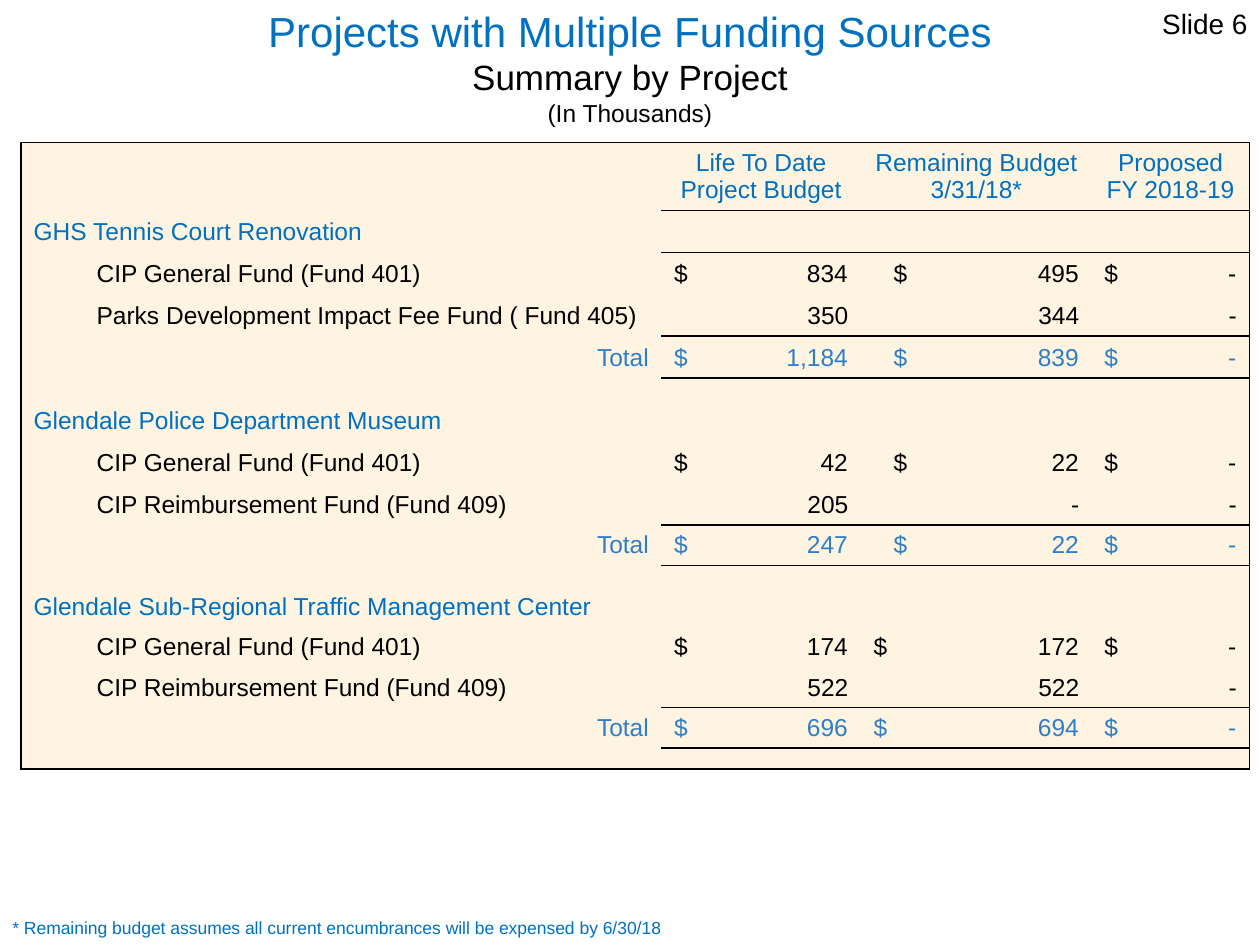
"""Builds the slide that sums up projects with multiple funding sources."""
from lxml.etree import SubElement
from pptx import Presentation
from pptx.dml.color import RGBColor as Rgb
from pptx.enum.text import MSO_ANCHOR as Anchor, MSO_AUTO_SIZE as AutoSize, PP_ALIGN as Align
from pptx.oxml.ns import qn
from pptx.util import Pt

THEME = {
    "font": "Arial", "blue": "0070C0", "total": "2F7FC7", "black": "000000", "cream": "FFF3E1",
    "title": 24, "subtitle": 20, "page": 16, "body": 14, "note": 10, "blank": 4,
}
NO_STYLE = "{2D5ABB26-0587-4C30-8999-92F81FD0307C}"
INSET = 7.2
WIDTHS = [366, 114, 132, 90]
HEADINGS = ["", "Life To Date Project Budget", "Remaining Budget 3/31/18*", "Proposed FY 2018-19"]
GENERAL = "CIP General Fund (Fund 401)"
REIMBURSEMENT = "CIP Reimbursement Fund (Fund 409)"
PROJECTS = [
    ("GHS Tennis Court Renovation", 24, 24, 11.5, [
        (GENERAL, "834", "495", "-"),
        ("Parks Development Impact Fee Fund ( Fund 405)", "350", "344", "-"),
        ("Total", "1,184", "839", "-")]),
    ("Glendale Police Department Museum", 24, 23.1, 11.5, [
        (GENERAL, "42", "22", "-"),
        (REIMBURSEMENT, "205", "-", "-"),
        ("Total", "247", "22", "-")]),
    ("Glendale Sub-Regional Traffic Management Center", 23.1, 23.1, 0, [
        (GENERAL, "174", "172", "-"),
        (REIMBURSEMENT, "522", "522", "-"),
        ("Total", "696", "694", "-")]),
]


def apply_format(target, values):
    for name, value in values.items():
        setattr(target, name, value)


def write(paragraph, text, size, color, align=Align.LEFT):
    paragraph.alignment = align
    run = paragraph.add_run()
    run.text = text
    apply_format(run.font, {"name": THEME["font"], "size": Pt(THEME[size]), "bold": False})
    run.font.color.rgb = Rgb.from_string(THEME[color])


deck = Presentation()
apply_format(deck, {"slide_width": Pt(720), "slide_height": Pt(540)})
slide = deck.slides.add_slide(deck.slide_layouts[5])

heading = slide.shapes.title
apply_format(heading, {"left": Pt(24), "top": Pt(14), "width": Pt(672), "height": Pt(48)})
apply_format(heading.text_frame, {
    "word_wrap": True, "auto_size": AutoSize.NONE, "vertical_anchor": Anchor.MIDDLE})
heading_line = heading.text_frame.paragraphs[0]
write(heading_line, "Projects with Multiple Funding Sources", "title", "blue", Align.CENTER)
heading_line.add_line_break()
write(heading_line, "Summary by Project", "subtitle", "black", Align.CENTER)
heading_line.add_line_break()
write(heading_line, "(In Thousands)", "body", "black", Align.CENTER)

rows = [("heading", 38.5, 0, HEADINGS)]
for project, row_height, total_height, dollar_indent, funds in PROJECTS:
    rows.append(("project", row_height, 0, [project, "", "", ""]))
    for order, fund in enumerate(funds):
        kind = ["first", "fund", "total"][order]
        rows.append((kind, total_height if kind == "total" else row_height, dollar_indent, fund))
    rows.append(("blank", 12, 0, [""] * 4))

summary_frame = slide.shapes.add_table(
    len(rows), len(WIDTHS), Pt(12), Pt(81.5), Pt(sum(WIDTHS)), Pt(sum(row[1] for row in rows)))
summary = summary_frame.table
apply_format(summary, {"first_row": False, "horz_banding": False})
summary_frame._element.find(".//" + qn("a:tableStyleId")).text = NO_STYLE
for column, width in zip(summary.columns, WIDTHS):
    column.width = Pt(width)

last_row, last_column = len(rows) - 1, len(WIDTHS) - 1
for row_index, (kind, height, dollar_indent, texts) in enumerate(rows):
    summary.rows[row_index].height = Pt(height)
    above = rows[row_index - 1][0] if row_index else ""
    below = rows[row_index + 1][0] if row_index < last_row else ""
    for col, text in enumerate(texts):
        cell = summary.cell(row_index, col)
        paragraph = cell.text_frame.paragraphs[0]
        has_dollar = col > 0 and kind in ("first", "total")
        left = INSET
        if col == 0 and kind in ("first", "fund"):
            left += 36
        elif has_dollar and col == 2:
            left += dollar_indent
        padding = 0 if kind == "blank" else 3.6
        apply_format(cell, {
            "margin_left": Pt(left), "margin_right": Pt(INSET), "margin_top": Pt(padding),
            "margin_bottom": Pt(padding), "vertical_anchor": Anchor.BOTTOM})

        borders = {
            "a:lnL": col == 0,
            "a:lnR": col == last_column,
            "a:lnT": row_index == 0 or col > 0 and (kind == "total" or above == "heading"),
            "a:lnB": row_index == last_row or col > 0 and (kind == "heading" or below == "total"),
        }
        cell_format = cell._tc.get_or_add_tcPr()
        for side, shown in borders.items():
            if shown:
                line = SubElement(cell_format, qn(side), w=str(Pt(1)))
                SubElement(SubElement(line, qn("a:solidFill")), qn("a:srgbClr"), val=THEME["black"])
        cell.fill.solid()
        cell.fill.fore_color.rgb = Rgb.from_string(THEME["cream"])

        if not text:
            SubElement(paragraph._p, qn("a:endParaRPr"), sz=str(THEME["blank"] * 100))
            continue
        color = {"heading": "blue", "project": "blue", "total": "total"}.get(kind, "black")
        if kind == "heading":
            align = Align.CENTER
        elif has_dollar or (col == 0 and kind != "total"):
            align = Align.LEFT
        else:
            align = Align.RIGHT
        if has_dollar:
            stops = SubElement(paragraph._p.get_or_add_pPr(), qn("a:tabLst"))
            SubElement(stops, qn("a:tab"), pos=str(Pt(WIDTHS[col] - left - INSET - 0.25)), algn="r")
            text = f"$\t{text}"
        write(paragraph, text, "body", color, align)

NOTES = [
    ("* Remaining budget assumes all current encumbrances will be expensed by 6/30/18",
     (0, 520.5, 402, 19.5), "note", "blue", Align.LEFT),
    ("Slide 6", (552, 0, 168, 36), "page", "black", Align.RIGHT),
]
for text, place, size, color, align in NOTES:
    note = slide.shapes.add_textbox(*map(Pt, place))
    note.text_frame.word_wrap = True
    write(note.text_frame.paragraphs[0], text, size, color, align)

deck.save("out.pptx")
